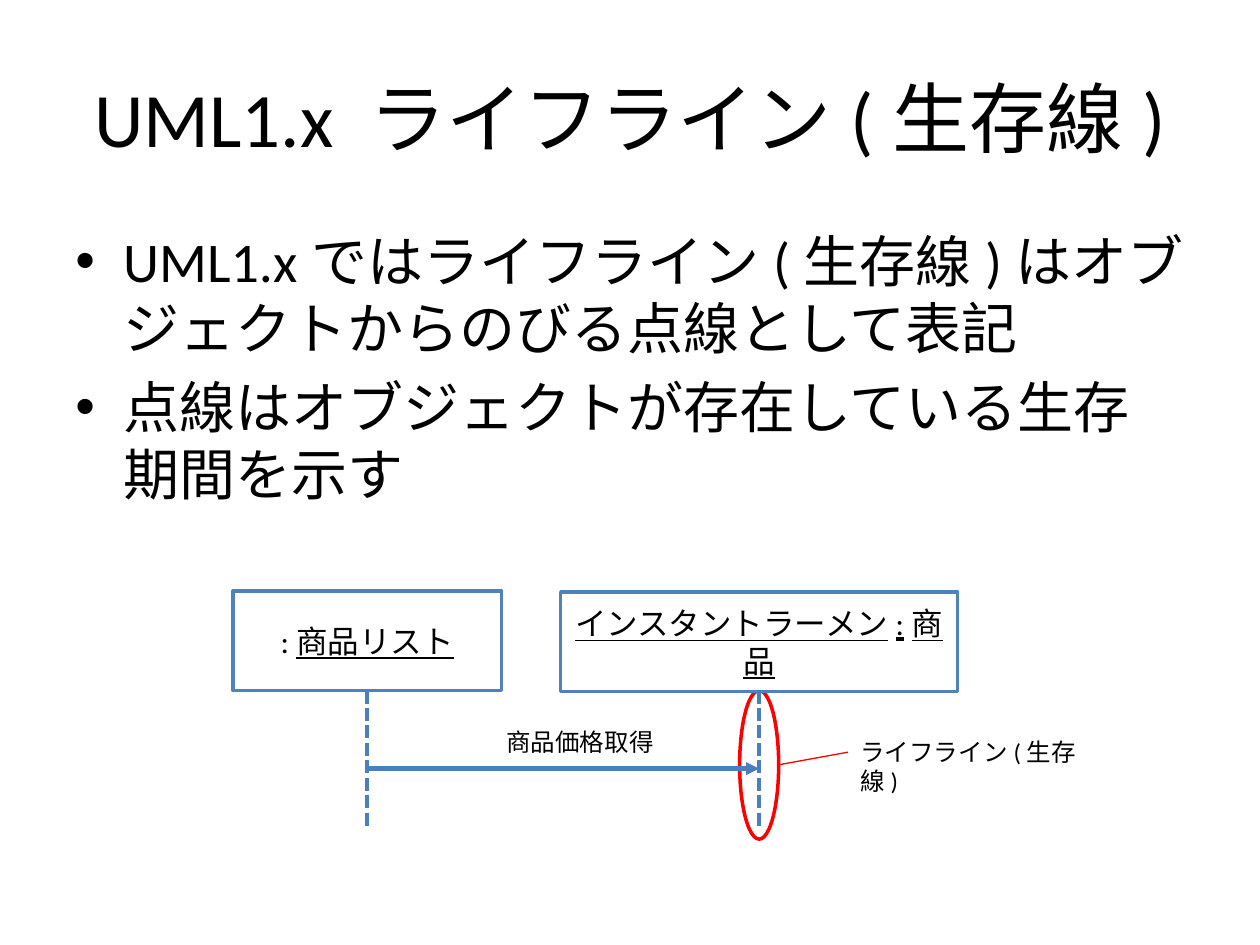
from lxml import etree
from pptx import Presentation
from pptx import util as u
from pptx.dml.color import RGBColor
from pptx.enum import dml, shapes, text
from pptx.oxml.ns import qn

COLORS = {"text": "000000", "box": "4F81BD", "line": "4B7EBC", "mark": "FF0000", "paper": "FFFFFF"}
FONT = "Calibri"

TITLE = "UML1.x ライフライン(生存線)"
BULLETS = [
    "UML1.xではライフライン(生存線)はオブジェクトからのびる点線として表記",
    "点線はオブジェクトが存在している生存期間を示す",
]
OBJECTS = [
    {"at": (1.85, 4.69, 2.13, 0.79), "runs": [(":", False), ("商品リスト", True)]},
    {"at": (4.45, 4.7, 3.15, 0.79), "runs": [("インスタントラーメン:商品", True)]},
]
LABELS = [
    ("商品価格取得", (3.92, 5.72, 1.71, 0.34)),
    ("ライフライン(生存線)", (6.73, 5.8, 2.13, 0.34)),
]
LIFELINE_TOP, LIFELINE_LENGTH, MESSAGE_Y = 5.48, 1.08, 6.1
MARK_W, MARK_H = 0.31, 1.18


def color(name):
    return RGBColor.from_string(COLORS[name])


def inches(values):
    return [u.Inches(v) for v in values]


def set_font(p, size):
    p.font.size = u.Pt(size)
    p.font.name = FONT
    p.font.color.rgb = color("text")


def add_text(s, at, lines, size, align=text.PP_ALIGN.LEFT, anchor=text.MSO_ANCHOR.TOP):
    tf = s.shapes.add_textbox(*inches(at)).text_frame
    tf.word_wrap = True
    tf.vertical_anchor = anchor
    for i, line in enumerate(lines):
        p = tf.paragraphs[0] if i == 0 else tf.add_paragraph()
        p.text = line
        p.alignment = align
        set_font(p, size)
    return tf


def add_bullet(p):
    pPr = p._p.get_or_add_pPr()
    pPr.set("marL", str(u.Inches(0.38)))
    pPr.set("indent", str(u.Inches(-0.38)))
    bu_font = etree.Element(qn("a:buFont"), typeface="Arial")
    bu_char = etree.Element(qn("a:buChar"), char="•")
    pPr.insert_element_before(bu_font, "a:buChar", "a:tabLst", "a:defRPr", "a:extLst")
    bu_font.addnext(bu_char)


def add_outline(s, kind, at, line):
    sp = s.shapes.add_shape(kind, *inches(at))
    sp.shadow.inherit = False
    sp.fill.solid()
    sp.fill.fore_color.rgb = color("paper")
    sp.line.color.rgb = color(line)
    sp.line.width = u.Pt(2)
    return sp


def add_line(s, start, end, line="line", width=2.5, dashed=False, arrow=False):
    c = s.shapes.add_connector(shapes.MSO_CONNECTOR.STRAIGHT, *inches(start + end))
    c.line.color.rgb = color(line)
    c.line.width = u.Pt(width)
    if dashed:
        c.line.dash_style = dml.MSO_LINE.SQUARE_DOT
    if arrow:
        etree.SubElement(c.line._get_or_add_ln(), qn("a:tailEnd"), type="triangle")
    etree.SubElement(c._element.spPr, qn("a:effectLst"))


def add_object(s, at, runs):
    tf = add_outline(s, shapes.MSO_SHAPE.RECTANGLE, at, "box").text_frame
    tf.word_wrap = True
    tf.vertical_anchor = text.MSO_ANCHOR.MIDDLE
    p = tf.paragraphs[0]
    p.alignment = text.PP_ALIGN.CENTER
    set_font(p, 18)
    for words, underlined in runs:
        r = p.add_run()
        r.text = words
        r.font.underline = underlined


def main():
    prs = Presentation()
    prs.slide_width, prs.slide_height = inches((10, 7.5))
    s = prs.slides.add_slide(prs.slide_layouts[6])

    centers = [o["at"][0] + o["at"][2] / 2 for o in OBJECTS]
    sender, receiver = centers
    mark_at = (receiver - MARK_W / 2, LIFELINE_TOP, MARK_W, MARK_H)
    add_outline(s, shapes.MSO_SHAPE.OVAL, mark_at, "mark")

    add_text(s, (0.5, 0.3, 9, 1.25), [TITLE], 44, text.PP_ALIGN.CENTER, text.MSO_ANCHOR.MIDDLE)
    for p in add_text(s, (0.5, 1.75, 9, 2.71), BULLETS, 32).paragraphs:
        p.space_before = u.Pt(6.4)
        add_bullet(p)

    for obj, x in zip(OBJECTS, centers):
        add_object(s, **obj)
        add_line(s, (x, LIFELINE_TOP), (x, LIFELINE_TOP + LIFELINE_LENGTH), dashed=True)
    add_line(s, (sender, MESSAGE_Y), (receiver, MESSAGE_Y), arrow=True)

    for words, at in LABELS:
        add_text(s, at, [words], 14)
    mark_edge = (receiver + MARK_W / 2, LIFELINE_TOP + MARK_H / 2)
    add_line(s, mark_edge, (LABELS[1][1][0], 5.97), "mark", 0.75)

    prs.save("out.pptx")


if __name__ == "__main__":
    main()
